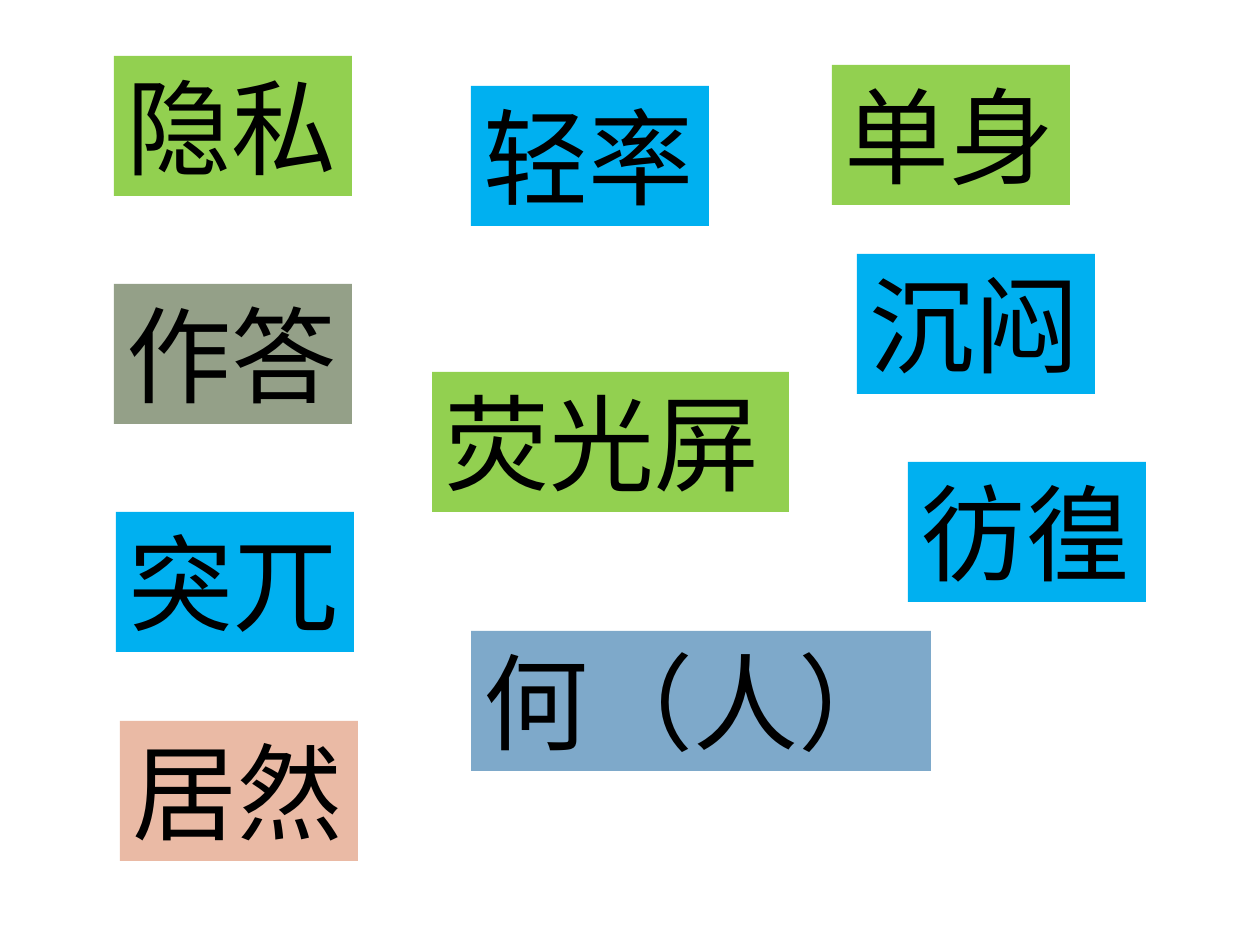
"""Build a slide of coloured Chinese vocabulary cards."""
from pptx import Presentation
from pptx.dml.color import RGBColor
from pptx.enum.text import MSO_AUTO_SIZE
from pptx.util import Emu, Pt

GREEN = RGBColor(0x92, 0xD0, 0x50)
BLUE = RGBColor(0x00, 0xB0, 0xF0)
SAGE = RGBColor(0x94, 0xA0, 0x88)
PEACH = RGBColor(0xEA, 0xBA, 0xA5)
STEEL = RGBColor(0x7E, 0xA9, 0xCA)
BLACK = RGBColor(0x00, 0x00, 0x00)

CARD_WIDTH = 238
CARD_HEIGHT = 140


def px(length):
    return Emu(round(length * 914400 / 126))


presentation = Presentation()
presentation.slide_width = px(1260)
presentation.slide_height = px(945)
slide = presentation.slides.add_slide(presentation.slide_layouts[6])

cards = [
    ("隐私", 114, 56, CARD_WIDTH, GREEN),
    ("作答", 114, 284, CARD_WIDTH, SAGE),
    ("突兀", 116, 512, CARD_WIDTH, BLUE),
    ("居然", 120, 721, CARD_WIDTH, PEACH),
    ("轻率", 471, 86, CARD_WIDTH, BLUE),
    ("荧光屏", 432, 372, 357, GREEN),
    ("何（人）", 471, 631, 460, STEEL),
    ("单身", 832, 65, CARD_WIDTH, GREEN),
    ("沉闷", 857, 254, CARD_WIDTH, BLUE),
    ("彷徨", 908, 462, CARD_WIDTH, BLUE),
]

for word, left, top, width, color in cards:
    card = slide.shapes.add_textbox(px(left), px(top), px(width), px(CARD_HEIGHT))
    card.fill.solid()
    card.fill.fore_color.rgb = color
    text_frame = card.text_frame
    text_frame.word_wrap = True
    text_frame.auto_size = MSO_AUTO_SIZE.NONE
    paragraph = text_frame.paragraphs[0]
    paragraph.text = word
    paragraph.font.name = "Calibri"
    paragraph.font.size = Pt(60)
    paragraph.font.color.rgb = BLACK

presentation.save("out.pptx")
